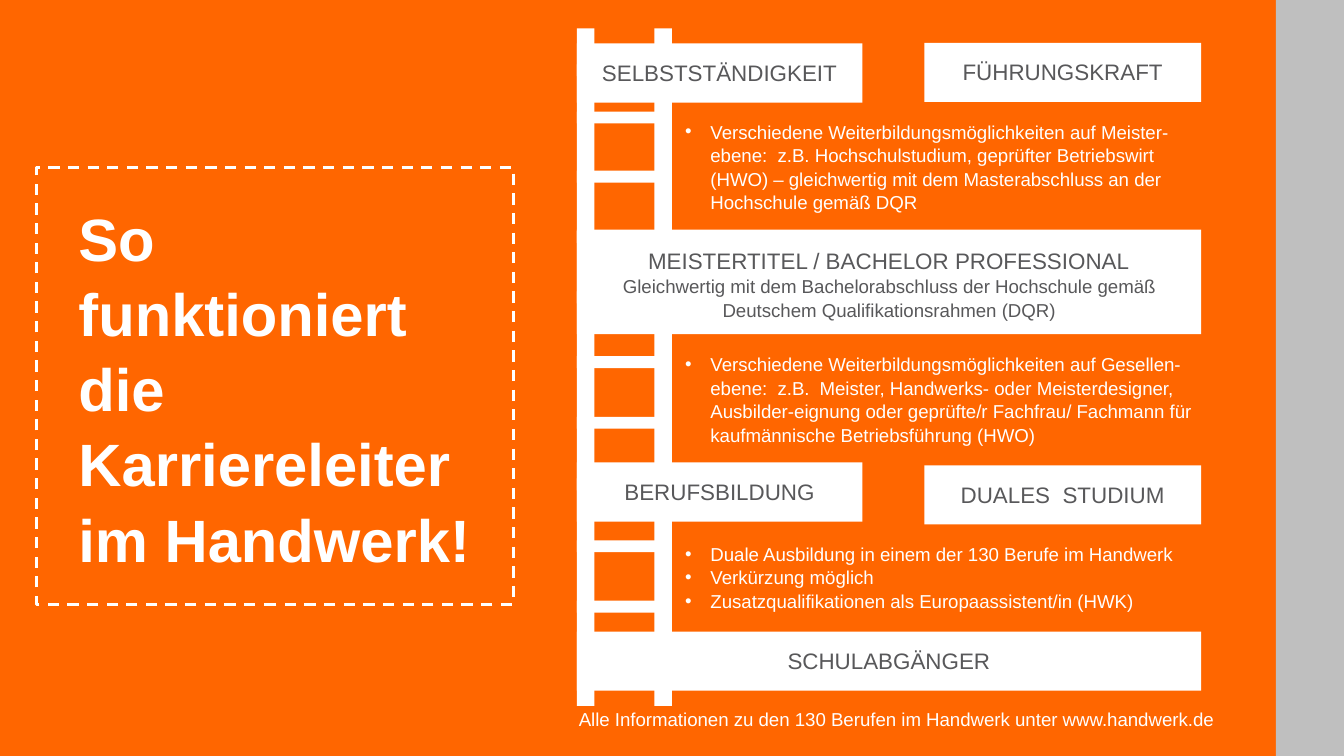
from pptx import Presentation
from pptx.util import Pt
from pptx.dml.color import RGBColor
from pptx.enum.dml import MSO_LINE as Dash
from pptx.enum.shapes import MSO_SHAPE as Form
from pptx.enum.text import MSO_ANCHOR as Anchor, PP_ALIGN as Align, MSO_AUTO_SIZE as Fit
from pptx.oxml.ns import qn
from lxml.etree import SubElement

ORANGE, GRAY, WHITE, DARK = "FF6600", "BFBFBF", "FFFFFF", "58585A"


def block(x, y, w, h, fill=None):
    box = slide.shapes.add_shape(Form.RECTANGLE, Pt(x), Pt(y), Pt(w), Pt(h))
    box.shadow.inherit = False
    box.line.fill.background()
    if fill:
        box.fill.solid()
        box.fill.fore_color.rgb = RGBColor.from_string(fill)
    else:
        box.fill.background()
    return box


def write(box, text, sizes, color, align=Align.LEFT, bullet=False, pad=(7.2, 8.5)):
    frame = box.text_frame
    frame.word_wrap = True
    frame.auto_size = Fit.SHAPE_TO_FIT_TEXT
    frame.vertical_anchor = Anchor.TOP
    frame.margin_left, frame.margin_right = Pt(pad[0]), Pt(7.2)
    frame.margin_top = frame.margin_bottom = Pt(pad[1])
    frame.text = text
    for para, size in zip(frame.paragraphs, sizes):
        para.alignment = align
        para.line_spacing = 1.05
        if bullet:
            props = para._p.get_or_add_pPr()
            props.set("marL", str(Pt(13.5)))
            props.set("indent", str(-Pt(13.5)))
            SubElement(props, qn("a:buFont")).set("typeface", "Arial")
            SubElement(props, qn("a:buChar")).set("char", "•")
        for run in para.runs:
            run.font.name = "Arial"
            run.font.size = Pt(size)
            run.font.color.rgb = RGBColor.from_string(color)
    return frame


deck = Presentation()
deck.slide_width, deck.slide_height = Pt(720), Pt(405)
slide = deck.slides.add_slide(deck.slide_layouts[6])

block(0, -10, 689, 421, ORANGE)
block(683.5, -10, 44.5, 425, GRAY)

title = block(19.5, 89.75, 255.5, 234)
title.line.color.rgb = RGBColor.from_string(WHITE)
title.line.width = Pt(1.5)
title.line.dash_style = Dash.DASH
frame = write(title, "So\vfunktioniert\vdie Karriereleiter im Handwerk!", [32], WHITE, pad=(22.5, 20))
frame.vertical_anchor = Anchor.MIDDLE
for run in frame.paragraphs[0].runs:
    run.font.bold = True

left = 309
for x in (left, 350.6):
    block(x, 15.2, 9.4, 363, WHITE)
for y in (34.5, 59.8, 91.5, 123.8, 156.2, 190.8, 223.3, 256.3, 289.5, 321.8):
    block(left, y, 51, 6.4, WHITE)

right, full, half, side = 495.2, 334.5, 153, 148.3
steps = [
    (left, 338.4, full, 31.7, "SCHULABGÄNGER"),
    (left, 23.3, half, 31.7, "SELBSTSTÄNDIGKEIT"),
    (right, 23, side, 31.7, "FÜHRUNGSKRAFT"),
    (left, 123.1, full, 56, "MEISTERTITEL / BACHELOR PROFESSIONAL\n"
     "Gleichwertig mit dem Bachelorabschluss der Hochschule gemäß "
     "Deutschem Qualifikationsrahmen (DQR)"),
    (left, 247.8, half, 31.7, "BERUFSBILDUNG"),
    (right, 249.3, side, 31.7, "DUALES  STUDIUM"),
]
for x, y, w, h, text in steps:
    write(block(x, y, w, h, WHITE), text, [12, 10], DARK, Align.CENTER)

notes = [
    (303, 372.2, 363, 29.3, False,
     "Alle Informationen zu den 130 Berufen im Handwerk unter www.handwerk.de"),
    (360, 281.5, 289.5, 53.3, True,
     "Duale Ausbildung in einem der 130 Berufe im Handwerk\nVerkürzung möglich\n"
     "Zusatzqualifikationen als Europaassistent/in (HWK)"),
    (360, 180, 289.5, 65.5, True,
     "Verschiedene Weiterbildungsmöglichkeiten auf Gesellen-ebene:  z.B. \tMeister, "
     "Handwerks- oder Meisterdesigner, Ausbilder-eignung oder geprüfte/r Fachfrau/ "
     "Fachmann für kaufmännische Betriebsführung (HWO)"),
    (360, 55.4, 289.5, 65.5, True,
     "Verschiedene Weiterbildungsmöglichkeiten auf Meister-ebene:  z.B. Hochschulstudium, "
     "geprüfter Betriebswirt (HWO) – gleichwertig mit dem Masterabschluss an der "
     "Hochschule gemäß DQR"),
]
for x, y, w, h, bullet, text in notes:
    box = slide.shapes.add_textbox(Pt(x), Pt(y), Pt(w), Pt(h))
    write(box, text, [10] * 3, WHITE, bullet=bullet)

deck.save("out.pptx")
